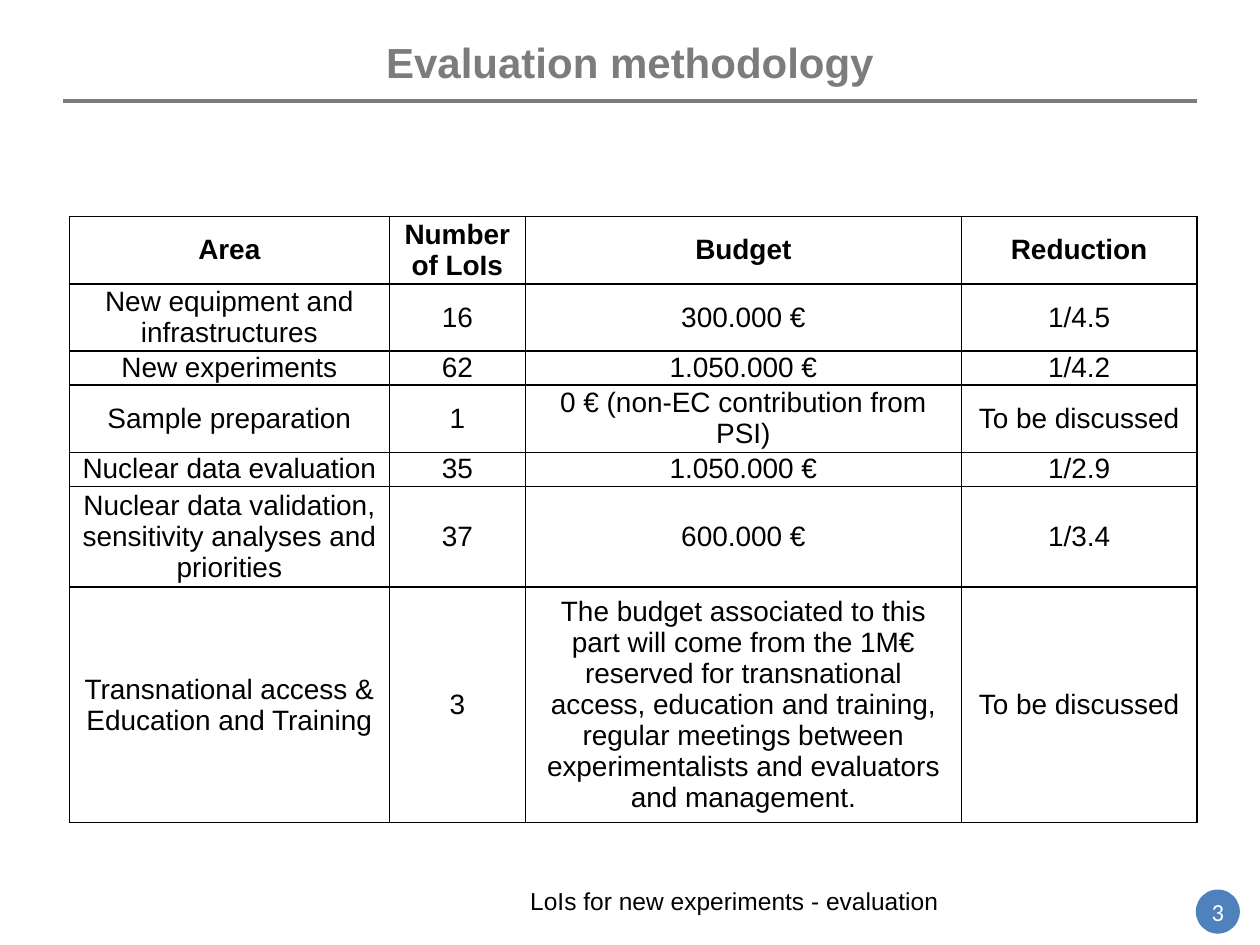
from dataclasses import dataclass

from lxml.etree import SubElement
from pptx import Presentation
from pptx.dml.color import RGBColor
from pptx.enum.shapes import MSO_CONNECTOR, MSO_SHAPE
from pptx.enum.text import MSO_ANCHOR, MSO_AUTO_SIZE, PP_ALIGN
from pptx.oxml.ns import qn
from pptx.util import Inches, Pt


@dataclass(frozen=True)
class Theme:
    grey: str = "7C7C7D"
    black: str = "000000"
    white: str = "FFFFFF"
    blue: str = "4F81BD"
    font: str = "Arial"
    badge_font: str = "Calibri"
    title: int = 24
    table: int = 16
    small: int = 14
    rule: int = 2
    border: int = 1


THEME = Theme()

COLUMNS = [2.54, 1.08, 3.46, 1.87]
ROW_HEIGHTS = [0.53, 0.53, 0.27, 0.53, 0.27, 0.8, 1.87]
ROWS = [
    ("Area", "Number of LoIs", "Budget", "Reduction"),
    ("New equipment and infrastructures", "16", "300.000 €", "1/4.5"),
    ("New experiments", "62", "1.050.000 €", "1/4.2"),
    ("Sample preparation", "1", "0 € (non-EC contribution from PSI)", "To be discussed"),
    ("Nuclear data evaluation", "35", "1.050.000 €", "1/2.9"),
    ("Nuclear data validation, sensitivity analyses and priorities", "37",
     "600.000 €", "1/3.4"),
    ("Transnational access & Education and Training", "3",
     "The budget associated to this part will come from the 1M€ reserved for "
     "transnational access, education and training, regular meetings between "
     "experimentalists and evaluators and management.", "To be discussed"),
]


def write(tf, text, size, color=THEME.black, font=THEME.font, bold=False,
          align=PP_ALIGN.CENTER):
    p = tf.paragraphs[0]
    p.alignment = align
    r = p.add_run()
    r.text = text
    r.font.size = Pt(size)
    r.font.name = font
    r.font.bold = bold
    r.font.color.rgb = RGBColor.from_string(color)


def add_title(s, text, x, y, w, h):
    sp = s.shapes.title
    sp.left, sp.top, sp.width, sp.height = map(Inches, (x, y, w, h))
    tf = sp.text_frame
    tf.auto_size = MSO_AUTO_SIZE.NONE
    tf.vertical_anchor = MSO_ANCHOR.MIDDLE
    write(tf, text, THEME.title, color=THEME.grey, bold=True)
    rule_y = Inches(y + h + 0.12)
    line = s.shapes.add_connector(MSO_CONNECTOR.STRAIGHT, Inches(x), rule_y,
                                  Inches(x + w), rule_y)
    line.line.color.rgb = RGBColor.from_string(THEME.grey)
    line.line.width = Pt(THEME.rule)
    SubElement(line._element.spPr, qn("a:effectLst"))


def set_borders(cell):
    tc_pr = cell._tc.get_or_add_tcPr()
    for side in ("lnL", "lnR", "lnT", "lnB"):
        ln = SubElement(tc_pr, qn(f"a:{side}"), w=str(Pt(THEME.border)))
        fill = SubElement(ln, qn("a:solidFill"))
        SubElement(fill, qn("a:srgbClr"), val=THEME.black)


def add_budget_table(s, x, y, w, h):
    table = s.shapes.add_table(len(ROWS), len(COLUMNS), Inches(x), Inches(y),
                               Inches(w), Inches(h)).table
    table.first_row = table.horz_banding = False
    for column, width in zip(table.columns, COLUMNS):
        column.width = Inches(width)
    for i, (row, height) in enumerate(zip(table.rows, ROW_HEIGHTS)):
        row.height = Inches(height)
        for cell, text in zip(row.cells, ROWS[i]):
            cell.margin_left = cell.margin_right = Inches(0.07)
            cell.margin_top = cell.margin_bottom = 0
            cell.vertical_anchor = MSO_ANCHOR.MIDDLE
            set_borders(cell)
            cell.fill.background()
            write(cell.text_frame, text, THEME.table, bold=i == 0)


def add_footer(s, text, x, y, w, h):
    sp = s.shapes.add_textbox(Inches(x), Inches(y), Inches(w), Inches(h))
    sp.text_frame.word_wrap = False
    write(sp.text_frame, text, THEME.small, align=PP_ALIGN.LEFT)


def add_page_badge(s, number, x, y, w, h):
    sp = s.shapes.add_shape(MSO_SHAPE.OVAL, Inches(x), Inches(y), Inches(w), Inches(h))
    sp.shadow.inherit = False
    sp.fill.solid()
    sp.fill.fore_color.rgb = RGBColor.from_string(THEME.blue)
    sp.line.fill.background()
    tf = sp.text_frame
    tf.word_wrap = False
    tf.vertical_anchor = MSO_ANCHOR.MIDDLE
    tf.margin_left = tf.margin_right = tf.margin_top = tf.margin_bottom = 0
    write(tf, number, THEME.small, color=THEME.white, font=THEME.badge_font)


def main():
    prs = Presentation()
    prs.slide_width, prs.slide_height = Inches(10), Inches(7.5)
    s = prs.slides.add_slide(prs.slide_layouts[5])
    add_footer(s, "LoIs for new experiments - evaluation", 4.11, 6.98, 3.45, 0.34)
    add_title(s, "Evaluation methodology", 0.5, 0.3, 9, 0.38)
    add_page_badge(s, "3", 9.49, 7.06, 0.35, 0.35)
    add_budget_table(s, 0.55, 1.72, sum(COLUMNS), sum(ROW_HEIGHTS))
    prs.save("out.pptx")


if __name__ == "__main__":
    main()
